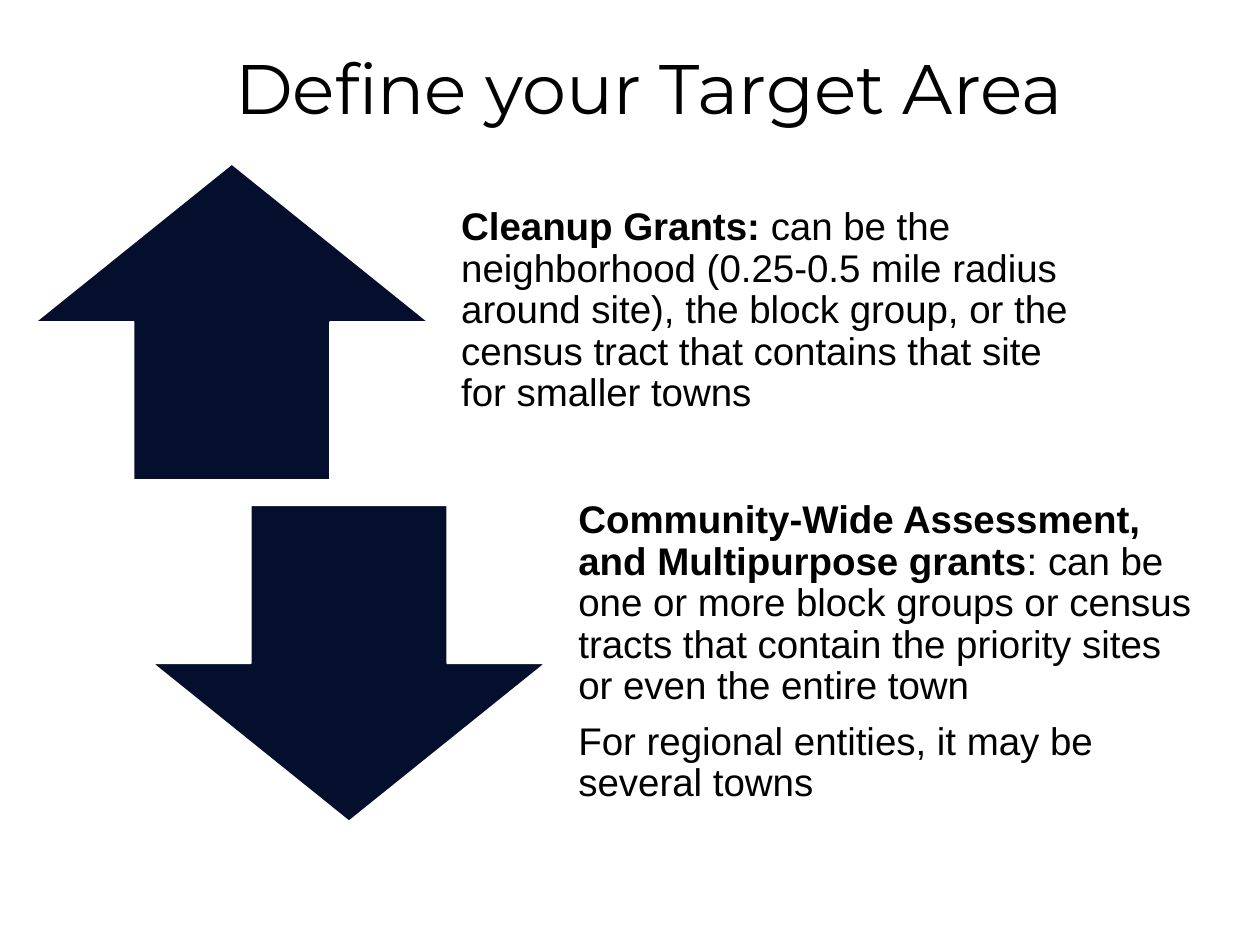
from pptx import Presentation
from pptx.dml.color import RGBColor
from pptx.enum import shapes, text
from pptx.util import Inches, Pt

UP = shapes.MSO_SHAPE.UP_ARROW
DOWN = shapes.MSO_SHAPE.DOWN_ARROW
ROWS = [
    (0.28, 1.3, UP, [
        [("Cleanup Grants: ", True),
         ("can be the neighborhood (0.25-0.5 mile radius around site), the block "
          "group, or the census tract that contains that site for smaller towns", False)],
    ]),
    (1.21, 4.01, DOWN, [
        [("Community-Wide Assessment, and Multipurpose grants", True),
         (": can be one or more block groups or census tracts that contain the "
          "priority sites or even the entire town", False)],
        [("For regional entities, it may be several towns", False)],
    ]),
]


def color(code):
    """Turn a hex string into a colour."""
    return RGBColor.from_string(code)


def frame(slide, x, y, w, h):
    """Add a wrapping, vertically centred text box and return its frame."""
    body = slide.shapes.add_textbox(Inches(x), Inches(y), Inches(w), Inches(h)).text_frame
    body.word_wrap = True
    body.vertical_anchor = text.MSO_ANCHOR.MIDDLE
    return body


def style(para, font, size):
    """Set the line spacing and font of a paragraph."""
    para.line_spacing = 0.9
    para.font.name = font
    para.font.size = Pt(size)
    para.font.color.rgb = color("000000")


def title(slide, x, y, w, h):
    """Write the centred slide title in the given box."""
    para = frame(slide, x, y, w, h).paragraphs[0]
    para.text = "Define your Target Area"
    para.alignment = text.PP_ALIGN.CENTER
    style(para, "Montserrat", 40)


def arrow(slide, kind, x, y, w, h):
    """Draw a block arrow in the given box."""
    shape = slide.shapes.add_shape(kind, Inches(x), Inches(y), Inches(w), Inches(h))
    shape.shadow.inherit = False
    shape.fill.solid()
    shape.fill.fore_color.rgb = color("040F2D")
    shape.line.color.rgb = color("FFFFFF")
    shape.line.width = Pt(1)


def notes(slide, paras, x, y, w, h):
    """Write the grant description in the given box."""
    body = frame(slide, x, y, w, h)
    body.margin_left = body.margin_right = body.margin_bottom = Inches(0.17)
    body.margin_top = 0
    for i, parts in enumerate(paras):
        para = body.add_paragraph() if i else body.paragraphs[0]
        style(para, "Arial", 22)
        para.space_after = Pt(7.7)
        for words, bold in parts:
            run = para.add_run()
            run.text = words
            run.font.bold = bold


def row(slide, kind, paras, x, y, w, h):
    """Place an arrow with its description to the right."""
    arrow(slide, kind, x, y, 3.12, h)
    notes(slide, paras, x + 3.21, y, w - 3.21, h)


def main():
    """Build and save the slide."""
    deck = Presentation()
    deck.slide_width, deck.slide_height = Inches(10), Inches(7.5)
    slide = deck.slides.add_slide(deck.slide_layouts[6])
    title(slide, 0.69, 0, 8.92, 1.45)
    for x, y, kind, paras in ROWS:
        row(slide, kind, paras, x, y, 8.5, 2.51)
    deck.save("out.pptx")


if __name__ == "__main__":
    main()
